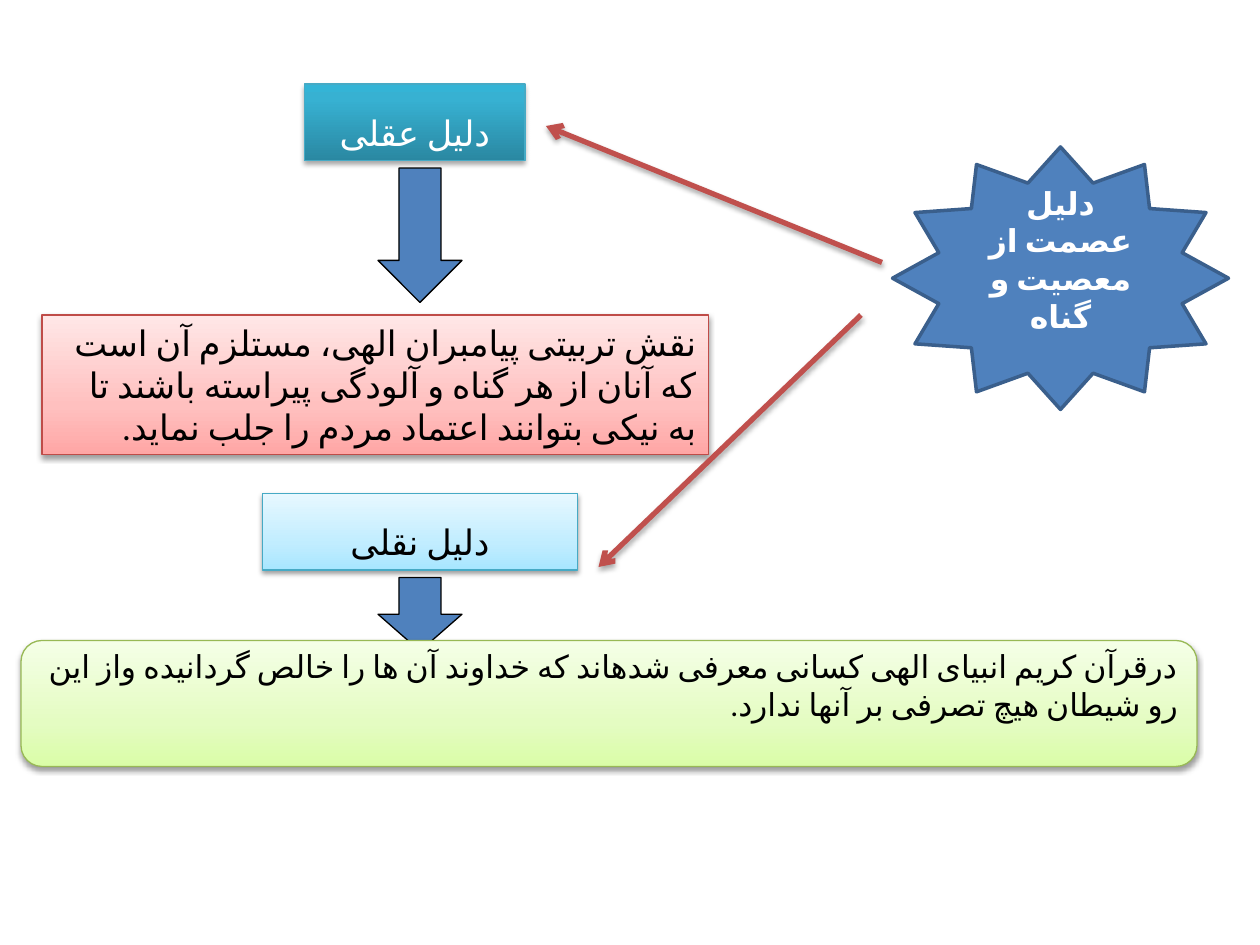
import copy
from dataclasses import dataclass
from typing import Optional

import pptx
import pptx.dml.color
import pptx.enum.lang
import pptx.enum.shapes
import pptx.enum.text
import pptx.oxml
import pptx.oxml.ns
import pptx.util

PX = 7620  # EMU per px, 120 px to the inch
FONT = "Calibri"
SHAPES = pptx.enum.shapes.MSO_SHAPE
ALIGN = pptx.enum.text.PP_ALIGN
ANCHOR = pptx.enum.text.MSO_ANCHOR
qn = pptx.oxml.ns.qn


@dataclass
class Shadow:
    opacity: int  # percent
    distance: float  # points
    blur: float = 3.1


@dataclass
class Box:
    left: int
    top: int
    width: int
    height: int
    kind: SHAPES
    stops: tuple  # (percent, colour) from bottom to top, or one colour
    line: str
    line_width: float = 0.75
    shadow: Optional[Shadow] = None
    text: str = ""
    size: int = 20
    color: str = "000000"
    bold: bool = False
    right_to_left: bool = False
    spacing: float = 1.0
    grow: bool = False


@dataclass
class Arrow:
    start: tuple
    end: tuple


STRONG = Shadow(35, 1.8)
SOFT = Shadow(38, 1.6)
BLUE = ((0, "4F81BD"),)


def rgb(value: str) -> pptx.dml.color.RGBColor:
    return pptx.dml.color.RGBColor.from_string(value)


def add_shadow(effects, shadow: Shadow) -> None:
    blur, distance = (int(pptx.util.Pt(v)) for v in (shadow.blur, shadow.distance))
    effects.append(pptx.oxml.parse_xml(
        f'<a:outerShdw {pptx.oxml.ns.nsdecls("a")} blurRad="{blur}" '
        f'dist="{distance}" dir="5400000" rotWithShape="0">'
        f'<a:srgbClr val="000000"><a:alpha val="{shadow.opacity * 1000}"/>'
        '</a:srgbClr></a:outerShdw>'))


def paint(shape, stops: tuple) -> None:
    if len(stops) == 1:
        shape.fill.solid()
        shape.fill.fore_color.rgb = rgb(stops[0][1])
        return
    shape.fill.gradient()
    shape.fill.gradient_angle = 90
    stop_list = next(shape._element.spPr.iter(qn("a:gsLst")))
    while len(stop_list) < len(stops):
        stop_list.append(copy.deepcopy(stop_list[-1]))
    for stop, (percent, color) in zip(shape.fill.gradient_stops, stops):
        stop.position = percent / 100
        stop.color.rgb = rgb(color)


def write(shape, box: Box) -> None:
    frame = shape.text_frame
    frame.word_wrap = True
    frame.vertical_anchor = ANCHOR.TOP if box.grow else ANCHOR.MIDDLE
    if box.grow:
        frame.auto_size = pptx.enum.text.MSO_AUTO_SIZE.SHAPE_TO_FIT_TEXT
    paragraph = frame.paragraphs[0]
    paragraph.text = box.text
    paragraph.line_spacing = box.spacing
    paragraph.alignment = ALIGN.RIGHT if box.right_to_left else ALIGN.CENTER
    if box.right_to_left:
        paragraph._p.get_or_add_pPr().set("rtl", "1")
    for run in paragraph.runs:
        run.font.name = FONT
        run.font.size = pptx.util.Pt(box.size)
        run.font.bold = box.bold
        run.font.color.rgb = rgb(box.color)
        run.font.language_id = pptx.enum.lang.MSO_LANGUAGE_ID.FARSI
        # Persian letters take the complex-script font
        properties = run._r.rPr
        properties.append(properties.makeelement(qn("a:cs"), {"typeface": FONT}))
    # A line break carries its own size
    for line_break in paragraph._p.findall(qn("a:br")):
        line_break.append(copy.deepcopy(paragraph.runs[0]._r.rPr))


def draw_box(slide, box: Box) -> None:
    shape = slide.shapes.add_shape(
        box.kind, *(v * PX for v in (box.left, box.top, box.width, box.height)))
    paint(shape, box.stops)
    shape.line.color.rgb = rgb(box.line)
    shape.line.width = pptx.util.Pt(box.line_width)
    shape.shadow.inherit = False
    if box.shadow:
        add_shadow(shape._element.spPr.find(qn("a:effectLst")), box.shadow)
    if box.text:
        write(shape, box)


def draw_arrow(slide, arrow: Arrow) -> None:
    connector = slide.shapes.add_connector(
        pptx.enum.shapes.MSO_CONNECTOR.STRAIGHT,
        *(v * PX for v in arrow.start + arrow.end))
    connector.line.color.rgb = rgb("C0504D")
    connector.line.width = pptx.util.Pt(3)
    properties = connector._element.spPr
    line = properties.find(qn("a:ln"))
    line.append(line.makeelement(qn("a:tailEnd"), {"type": "arrow"}))
    effects = properties.makeelement(qn("a:effectLst"), {})
    properties.append(effects)
    add_shadow(effects, STRONG)


# Parts from back to front
PARTS = (
    # Rational proof
    Box(40, 300, 635, 133, SHAPES.RECTANGLE,
        ((0, "FFA6A5"), (35, "FFC0BF"), (100, "FFE7E7")), "BF4C48", shadow=SOFT,
        text="نقش تربيتى پيامبران الهى، مستلزم آن است كه آنان از هر گناه و آلودگى "
             "پيراسته باشند تا به نيكى بتوانند اعتماد مردم را جلب نماید.",
        right_to_left=True, grow=True),
    Arrow((840, 250), (520, 120)),
    Box(290, 80, 210, 73, SHAPES.RECTANGLE,
        ((0, "2A88A2"), (80, "37B1D2"), (100, "34B4D6")), "46AAC5", shadow=STRONG,
        text="دلیل عقلی", color="FFFFFF", spacing=1.5, grow=True),
    Box(360, 160, 80, 128, SHAPES.DOWN_ARROW, BLUE, "000000"),
    # Scriptural proof
    Arrow((820, 300), (570, 540)),
    Box(250, 470, 300, 73, SHAPES.RECTANGLE,
        ((0, "A7E6FF"), (35, "C1EDFF"), (100, "E7F8FF")), "46AAC5", shadow=SOFT,
        text="دلیل نقلی", spacing=1.5, grow=True),
    Box(360, 550, 80, 70, SHAPES.DOWN_ARROW, BLUE, "000000"),
    Box(20, 610, 1120, 120, SHAPES.ROUNDED_RECTANGLE,
        ((0, "DAFDA7"), (35, "E4FCC2"), (100, "F5FFE7")), "98B955", shadow=SOFT,
        text="درقرآن كريم انبياى الهى كسانى معرفى شدهاند كه خداوند آن ها را خالص "
             "گردانيده واز اين رو شيطان هيچ تصرفى بر آنها ندارد.\n",
        size=18, right_to_left=True),
    # Topic
    Box(850, 140, 320, 250, SHAPES.STAR_12_POINT, BLUE, "3A5F8C", 2,
        text="دلیل عصمت از معصيت و گناه\n", size=18, color="FFFFFF", bold=True),
)


def main() -> None:
    presentation = pptx.Presentation()
    presentation.slide_width = 1200 * PX
    presentation.slide_height = 900 * PX
    slide = presentation.slides.add_slide(presentation.slide_layouts[6])
    for part in PARTS:
        if isinstance(part, Arrow):
            draw_arrow(slide, part)
        else:
            draw_box(slide, part)
    presentation.save("out.pptx")


if __name__ == "__main__":
    main()
